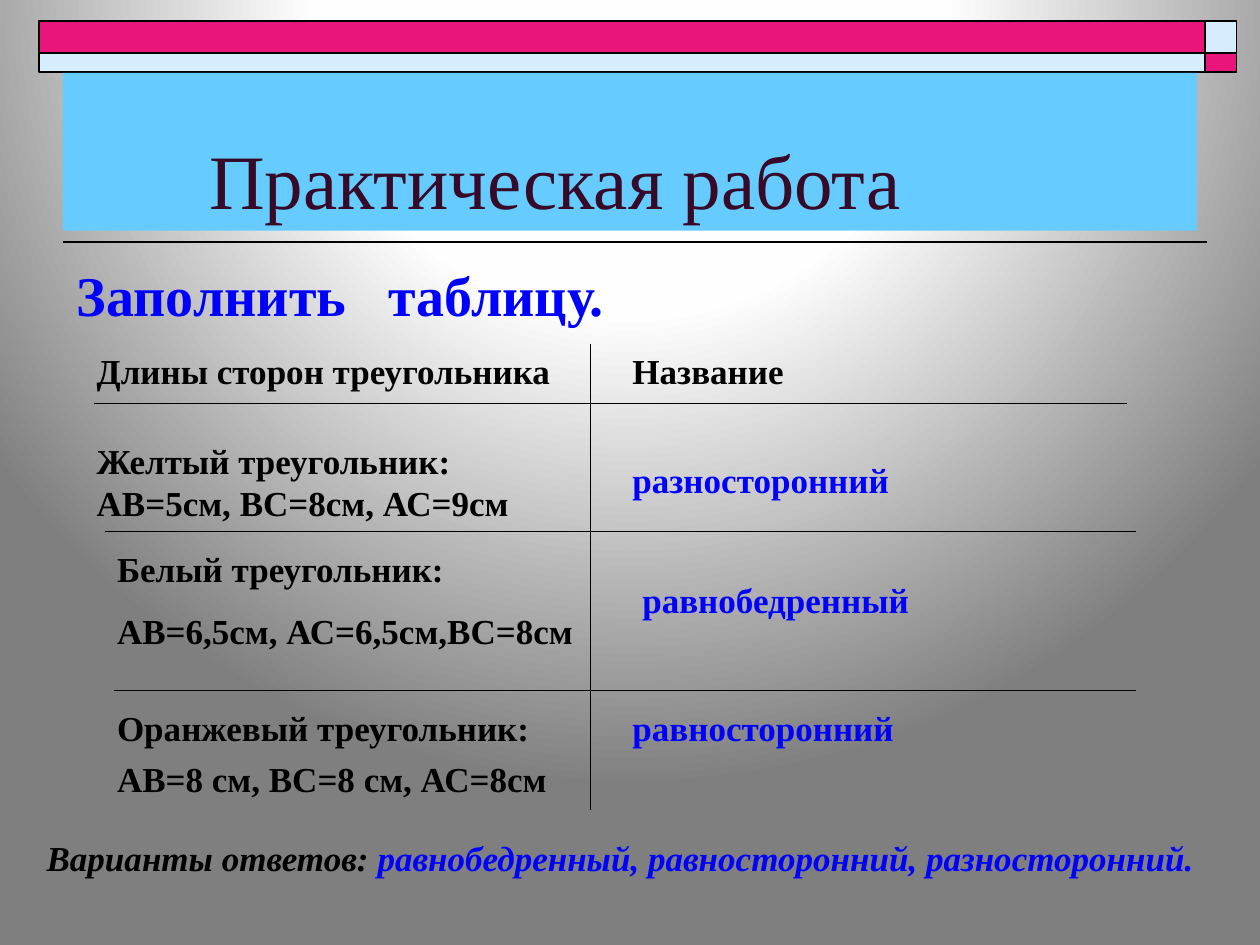
"""Build the slide with a triangle table exercise."""
import pptx
import pptx.dml.color
import pptx.enum.shapes
import pptx.enum.text
import pptx.oxml
import pptx.oxml.ns
import pptx.util

Cm = pptx.util.Cm
Pt = pptx.util.Pt
FONT = "Times New Roman"
COLOURS = {
    "black": "000000", "answer": "0000FF", "title": "370B28", "banner": "66CCFF",
    "pink": "EA157A", "pale": "D6ECFF",
    "centre": "FFFFFF", "middle": "FEFEFE", "edge": "7F7F7F",
}


def colour(name):
    """Return the named colour as an RGB value."""
    return pptx.dml.color.RGBColor.from_string(COLOURS[name])


def paint_background(page):
    """Give the page a circular gradient centred above its top edge."""
    page.background.fill.gradient()
    stops = "".join(
        f'<a:gs pos="{position * 1000}"><a:srgbClr val="{COLOURS[name]}"/></a:gs>'
        for position, name in ((0, "centre"), (40, "middle"), (100, "edge")))
    gradient = pptx.oxml.parse_xml(
        f'<a:gradFill {pptx.oxml.ns.nsdecls("a")} rotWithShape="1"><a:gsLst>{stops}</a:gsLst>'
        '<a:path path="circle"><a:fillToRect l="50000" t="-80000" r="50000" b="180000"/>'
        '</a:path></a:gradFill>')
    current = page.background._cSld.find(".//" + pptx.oxml.ns.qn("a:gradFill"))
    current.getparent().replace(current, gradient)


def add_rectangle(page, left, top, width, height, fill, outline=None):
    """Add a flat rectangle, outlined if a line colour is given."""
    shape = page.shapes.add_shape(
        pptx.enum.shapes.MSO_SHAPE.RECTANGLE, Cm(left), Cm(top), Cm(width), Cm(height))
    shape.shadow.inherit = False
    shape.fill.solid()
    shape.fill.fore_color.rgb = colour(fill)
    if outline:
        shape.line.color.rgb = colour(outline)
        shape.line.width = Pt(1)
    else:
        shape.line.fill.background()
    return shape


def add_rule(page, start, end, width=0.75):
    """Add a straight black line between two points."""
    points = [Cm(value) for value in (*start, *end)]
    rule = page.shapes.add_connector(pptx.enum.shapes.MSO_CONNECTOR.STRAIGHT, *points)
    rule.line.color.rgb = colour("black")
    rule.line.width = Pt(width)
    properties = rule._element.spPr
    properties.append(pptx.oxml.parse_xml(f'<a:effectLst {pptx.oxml.ns.nsdecls("a")}/>'))


def add_span(para, text, name="black", size=20, bold=True, italic=False):
    """Append one formatted run to a paragraph."""
    span = para.add_run()
    span.text = text
    span.font.name = FONT
    span.font.size = Pt(size)
    span.font.bold = bold
    span.font.italic = italic
    span.font.color.rgb = colour(name)


def add_box(page, left, top, width, height):
    """Add an empty wrapping text box."""
    box = page.shapes.add_textbox(Cm(left), Cm(top), Cm(width), Cm(height))
    box.text_frame.word_wrap = True
    return box


def add_cell(page, left, top, width, height, lines, name="black", gap=0):
    """Add the text of one table cell with a gap between its lines."""
    frame = add_box(page, left, top, width, height).text_frame
    for index, line in enumerate(lines):
        para = frame.add_paragraph() if index else frame.paragraphs[0]
        if index:
            para.space_before = Pt(gap)
        add_span(para, line, name)


def add_title(page):
    """Add the banner with the indented title."""
    frame = add_rectangle(page, 1.27, 1.47, 22.86, 3.18, "banner").text_frame
    frame.word_wrap = True
    frame.vertical_anchor = pptx.enum.text.MSO_ANCHOR.BOTTOM
    para = frame.paragraphs[0]
    para.alignment = pptx.enum.text.PP_ALIGN.LEFT
    para._p.get_or_add_pPr().set("marL", str(Cm(2.7)))
    add_span(para, "Практическая работа", "title", 44, bold=False)


def add_task(page):
    """Add the task line, its second word set at a tab stop."""
    para = add_box(page, 1.3, 5.13, 22.86, 1.5).text_frame.paragraphs[0]
    para._p.get_or_add_pPr().append(pptx.oxml.parse_xml(
        f'<a:tabLst {pptx.oxml.ns.nsdecls("a")}><a:tab pos="{Cm(6.28)}" algn="l"/></a:tabLst>'))
    add_span(para, "Заполнить\tтаблицу.", "answer", 32)


def add_options(page):
    """Add the line of possible answers."""
    para = add_box(page, 0.69, 16.74, 24.21, 1.09).text_frame.paragraphs[0]
    add_span(para, "Варианты ответов: ", italic=True)
    add_span(para, "равнобедренный, равносторонний, разносторонний.", "answer", italic=True)


def main():
    """Compose the slide and save it."""
    deck = pptx.Presentation()
    deck.slide_width, deck.slide_height = Cm(25.4), Cm(19.05)
    page = deck.slides.add_slide(deck.slide_layouts[6])
    paint_background(page)

    add_rule(page, (1.27, 4.88), (24.33, 4.88), 1)
    for top, height, wide, corner in ((0.43, 0.64, "pink", "pale"), (1.07, 0.38, "pale", "pink")):
        add_rectangle(page, 0.79, top, 23.5, height, wide, "black")
        add_rectangle(page, 24.29, top, 0.64, height, corner, "black")
    add_title(page)
    add_task(page)

    for left, right, height in ((1.9, 22.71, 8.13), (2.11, 22.91, 10.72), (2.29, 22.91, 13.92)):
        add_rule(page, (left, height), (right, height))
    add_rule(page, (11.91, 6.93), (11.91, 16.33))

    add_cell(page, 1.7, 6.93, 9.8, 1.09, ["Длины сторон треугольника"])
    add_cell(page, 1.7, 8.74, 10.21, 2.87, ["Желтый треугольник:", "АВ=5см, ВС=8см, АС=9см"])
    add_cell(page, 2.11, 10.92, 10.01, 2.36,
             ["Белый треугольник:", "АВ=6,5см, АС=6,5см,ВС=8см"], gap=11)
    add_cell(page, 2.11, 14.12, 10.8, 3.38,
             ["Оранжевый треугольник:", "АВ=8 см, ВС=8 см, АС=8см"], gap=5)

    add_cell(page, 12.5, 6.93, 10.21, 1.09, ["Название"])
    for left, top, answer in ((12.5, 9.12, "разносторонний"),
                              (12.7, 11.53, "равнобедренный"),
                              (12.5, 14.12, "равносторонний")):
        add_cell(page, left, top, 10.8, 1.09, [answer], "answer")
    add_options(page)
    deck.save("out.pptx")


if __name__ == "__main__":
    main()
